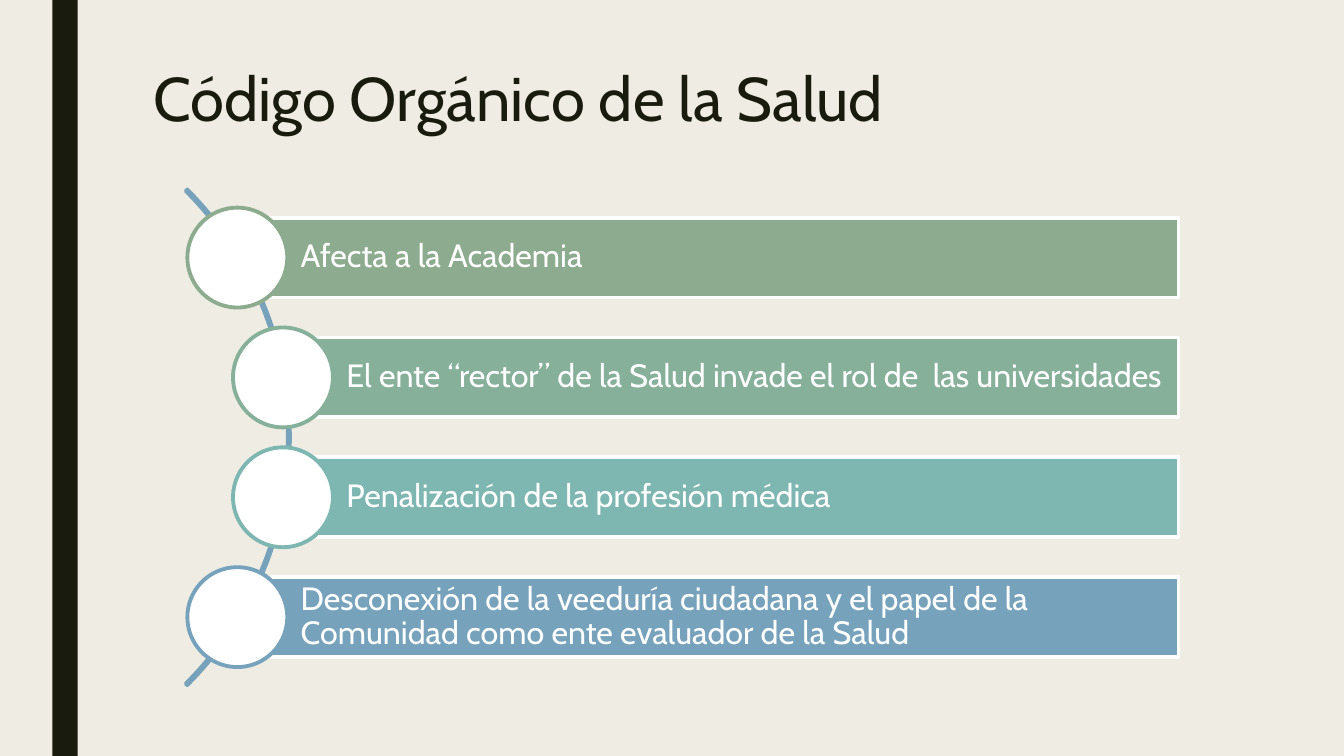
import math

import pptx
import pptx.dml.color
import pptx.enum.shapes
import pptx.enum.text
import pptx.util

Cm = pptx.util.Cm
Pt = pptx.util.Pt
SHAPES = pptx.enum.shapes.MSO_SHAPE
ANCHORS = pptx.enum.text.MSO_ANCHOR

SLIDE_WIDTH, SLIDE_HEIGHT = 33.87, 19.05
FONT = "Cabin"
DARK, WHITE, BACKGROUND, ARC_BLUE = "191B0E", "FFFFFF", "EFEDE3", "77A2BB"
LINE_WIDTH = 2.75

# Text, colour and indent of each bar
POINTS = [
    ("Afecta a la Academia", "8DAB8E", 1.26),
    ("El ente “rector” de la Salud invade el rol de  las universidades", "86B09A", 2.41),
    ("Penalización de la profesión médica", "7EB6B1", 2.41),
    ("Desconexión de la veeduría ciudadana y el papel de la "
     "Comunidad como ente evaluador de la Salud", "77A2BB", 1.26),
]


def set_color(color_format, value):
    color_format.rgb = pptx.dml.color.RGBColor.from_string(value)


def add_shape(slide, kind, left, top, width, height, fill=None, line=None):
    shape = slide.shapes.add_shape(kind, Cm(left), Cm(top), Cm(width), Cm(height))
    shape.shadow.inherit = False
    if fill:
        shape.fill.solid()
        set_color(shape.fill.fore_color, fill)
    else:
        shape.fill.background()
    if line:
        set_color(shape.line.color, line)
        shape.line.width = Pt(LINE_WIDTH)
    else:
        shape.line.fill.background()
    return shape


def write_text(shape, text, size, color, spacing, anchor, insets):
    """Fill a shape with one left-aligned paragraph; insets are left, top, right, bottom."""
    frame = shape.text_frame
    frame.word_wrap = True
    frame.auto_size = pptx.enum.text.MSO_AUTO_SIZE.NONE
    frame.vertical_anchor = anchor
    (frame.margin_left, frame.margin_top,
     frame.margin_right, frame.margin_bottom) = map(Cm, insets)
    paragraph = frame.paragraphs[0]
    paragraph.alignment = pptx.enum.text.PP_ALIGN.LEFT
    paragraph.line_spacing = spacing
    run = paragraph.add_run()
    run.text = text
    run.font.name = FONT
    run.font.size = Pt(size)
    set_color(run.font.color, color)


def add_background(slide):
    slide.background.fill.solid()
    set_color(slide.background.fill.fore_color, BACKGROUND)
    add_shape(slide, SHAPES.RECTANGLE, 1.32, 0, 0.64, SLIDE_HEIGHT, fill=DARK)


def add_title(slide, left, top, width, height):
    title = slide.shapes.title
    title.left, title.top, title.width, title.height = map(Cm, (left, top, width, height))
    write_text(title, "Código Orgánico de la Salud", size=44, color=DARK, spacing=0.89,
               anchor=ANCHORS.TOP, insets=(0.25, 0.13, 0.25, 0.13))


def add_arc(slide, left, middle, radius):
    """Draw a quarter arc bulging right, with both ends at the left edge."""
    center = left - radius * math.cos(math.radians(45))
    arc = add_shape(slide, SHAPES.BLOCK_ARC, center - radius, middle - radius,
                    2 * radius, 2 * radius, line=ARC_BLUE)
    arc.adjustments[0] = 189
    arc.adjustments[1] = 27
    arc.adjustments[2] = 0.003


def add_curved_list(slide, left, top, width, height):
    row_height = height / len(POINTS)
    bar_height = row_height * 2 / 3
    diameter = bar_height * 1.25
    add_arc(slide, left, top + height / 2, radius=8.83)
    for index, (text, color, indent) in enumerate(POINTS):
        middle = top + (index + 0.5) * row_height
        bar = add_shape(slide, SHAPES.RECTANGLE, left + indent, middle - bar_height / 2,
                        width - indent, bar_height, fill=color, line=WHITE)
        write_text(bar, text, size=23, color=WHITE, spacing=0.9,
                   anchor=ANCHORS.MIDDLE, insets=(1.6, 0.15, 0.15, 0.15))
        add_shape(slide, SHAPES.OVAL, left + indent - diameter / 2, middle - diameter / 2,
                  diameter, diameter, fill=WHITE, line=color)


def main():
    presentation = pptx.Presentation()
    presentation.slide_width = Cm(SLIDE_WIDTH)
    presentation.slide_height = Cm(SLIDE_HEIGHT)
    slide = presentation.slides.add_slide(presentation.slide_layouts.get_by_name("Title Only"))
    add_background(slide)
    add_title(slide, 3.61, 1.6, 26.67, 4.11)
    add_curved_list(slide, 4.72, 4.98, 24.98, 12.08)
    presentation.save("out.pptx")


if __name__ == "__main__":
    main()
